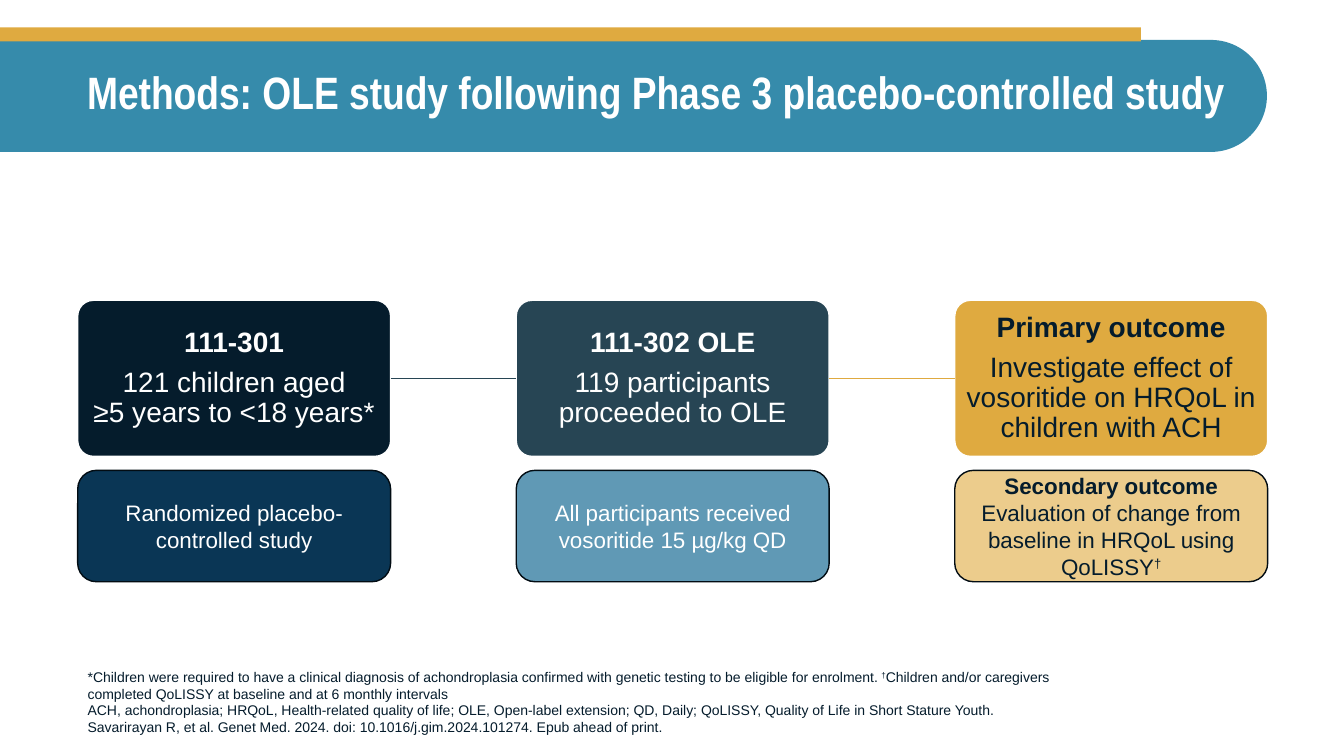
from dataclasses import dataclass

from lxml import etree
from pptx import Presentation
from pptx.dml.color import RGBColor
from pptx.enum.shapes import MSO_CONNECTOR as CONN, MSO_SHAPE as SHAPE
from pptx.enum.text import MSO_ANCHOR as ANCHOR, MSO_AUTO_SIZE as AUTO, PP_ALIGN as ALIGN
from pptx.oxml.ns import qn
from pptx.util import Pt


@dataclass(frozen=True)
class Theme:
    white: str = "FFFFFF"
    navy: str = "051C2C"
    outline: str = "020C13"
    slate: str = "274554"
    teal: str = "368BAB"
    gold: str = "DFAA40"
    deep_blue: str = "0A3655"
    sky: str = "6099B5"
    sand: str = "ECCC8C"
    font: str = "Arial"
    title_font: str = "Arial Narrow"
    title: float = 32.4
    card: float = 20
    detail: float = 16
    note: float = 10


T = Theme()

# Each stage: fill, detail fill, text colour, heading, body, detail paragraphs
STAGES = [
    (T.navy, T.deep_blue, T.white, "111-301",
     "121 children aged\v≥5 years to <18 years*",
     ["Randomized placebo-controlled study"]),
    (T.slate, T.sky, T.white, "111-302 OLE",
     "119 participants proceeded to OLE",
     ["All participants received vosoritide 15 µg/kg QD"]),
    (T.gold, T.sand, T.navy, "Primary outcome",
     "Investigate effect of vosoritide on HRQoL in children with ACH",
     ["Secondary outcome",
      "Evaluation of change from baseline in HRQoL using QoLISSY†"]),
]
LINK_COLORS = [T.slate, T.gold]

NOTES = [
    "*Children were required to have a clinical diagnosis of achondroplasia confirmed with "
    "genetic testing to be eligible for enrolment. †Children and/or caregivers completed "
    "QoLISSY at baseline and at 6 monthly intervals",
    "ACH, achondroplasia; HRQoL, Health-related quality of life; OLE, Open-label extension; "
    "QD, Daily; QoLISSY, Quality of Life in Short Stature Youth.",
    "Savarirayan R, et al. Genet Med. 2024. doi: 10.1016/j.gim.2024.101274. "
    "Epub ahead of print.",
]


def rgb(color):
    return RGBColor.from_string(color)


def add_block(s, kind, x, y, w, h, fill, line=None):
    sp = s.shapes.add_shape(kind, Pt(x), Pt(y), Pt(w), Pt(h))
    sp.shadow.inherit = False
    sp.fill.solid()
    sp.fill.fore_color.rgb = rgb(fill)
    if line:
        sp.line.color.rgb = rgb(line)
        sp.line.width = Pt(1)
    else:
        sp.line.fill.background()
    return sp


def write(tf, paragraphs, size, color, font=T.font, align=ALIGN.LEFT, anchor=ANCHOR.MIDDLE,
          bold_first=False, spacing=None, after=None):
    """Fill a text frame; each dagger is set as a superscript."""
    tf.word_wrap = True
    tf.auto_size = AUTO.NONE
    tf.vertical_anchor = anchor
    for i, text in enumerate(paragraphs):
        p = tf.add_paragraph() if i else tf.paragraphs[0]
        before, dagger, rest = text.partition("†")
        if dagger:
            for part in filter(None, (before, dagger, rest)):
                r = p.add_run()
                r.text = part
                if part == dagger:
                    r.font._element.set("baseline", "30000")
        else:
            p.text = text
        p.alignment = align
        p.line_spacing = spacing
        if after:
            p.space_after = Pt(after)
        p.font.name = font
        p.font.size = Pt(size)
        p.font.bold = bold_first and i == 0
        p.font.color.rgb = rgb(color)


def add_header(s, x, y, w, h):
    # Banner: a tall shape turned so that its rounded end faces right
    banner = add_block(s, SHAPE.ROUND_2_SAME_RECTANGLE,
                       x + (w - h) / 2, y + (h - w) / 2, h, w, T.teal)
    banner.adjustments[0], banner.adjustments[1] = 0, 0.5
    banner.rotation = 270
    add_block(s, SHAPE.RECTANGLE, x, y - 9, w - 90, 10, T.gold)

    # Title, brought in front of the banner
    title = s.shapes.title
    s.shapes._spTree.append(title._element)
    title.left, title.top = Pt(x + 55), Pt(y)
    title.width, title.height = Pt(w - 55), Pt(h - 1)
    write(title.text_frame, ["Methods: OLE study following Phase 3 placebo-controlled study"],
          T.title, T.white, T.title_font, bold_first=True, spacing=0.9)


def add_stage(s, x, y, w, h, stage):
    fill, detail_fill, color, heading, body, details = stage
    card_h, detail_h = 111.5, 79.5

    # Main card
    card = add_block(s, SHAPE.ROUNDED_RECTANGLE, x, y, w, card_h, fill, T.white)
    card.adjustments[0] = 0.1
    tf = card.text_frame
    tf.margin_left = tf.margin_right = tf.margin_top = tf.margin_bottom = Pt(1)
    write(tf, [heading, body], T.card, color, align=ALIGN.CENTER,
          bold_first=True, spacing=0.9, after=7)

    # Detail card, at the foot of the box
    detail = add_block(s, SHAPE.ROUNDED_RECTANGLE, x, y + h - detail_h, w, detail_h,
                       detail_fill, T.outline)
    write(detail.text_frame, details, T.detail, color, align=ALIGN.CENTER,
          bold_first=len(details) > 1)
    return card


def add_flow(s, x, y, w, h):
    card_w = 223.5
    pitch = (w - card_w) / (len(STAGES) - 1)
    cards = [add_stage(s, x + i * pitch, y, card_w, h, stage)
             for i, stage in enumerate(STAGES)]

    # Links between neighbouring cards
    for left, right, color in zip(cards, cards[1:], LINK_COLORS):
        link = s.shapes.add_connector(CONN.STRAIGHT, 0, 0, 0, 0)
        link.begin_connect(left, 3)
        link.end_connect(right, 1)
        link.line.color.rgb = rgb(color)
        link.line.width = Pt(1)
        etree.SubElement(link._element.spPr, qn("a:effectLst"))


def add_notes(s, x, y, w, h):
    box = s.shapes.add_textbox(Pt(x), Pt(y), Pt(w), Pt(h))
    write(box.text_frame, NOTES, T.note, T.navy, anchor=ANCHOR.BOTTOM)


def main():
    prs = Presentation()
    prs.slide_width, prs.slide_height = Pt(960), Pt(540)
    s = prs.slides.add_slide(prs.slide_layouts[5])
    add_header(s, 0, 28.5, 905, 80)
    add_flow(s, 55.5, 214.5, 850, 201)
    add_notes(s, 55.5, 483, 711, 46)
    prs.save("out.pptx")


if __name__ == "__main__":
    main()
